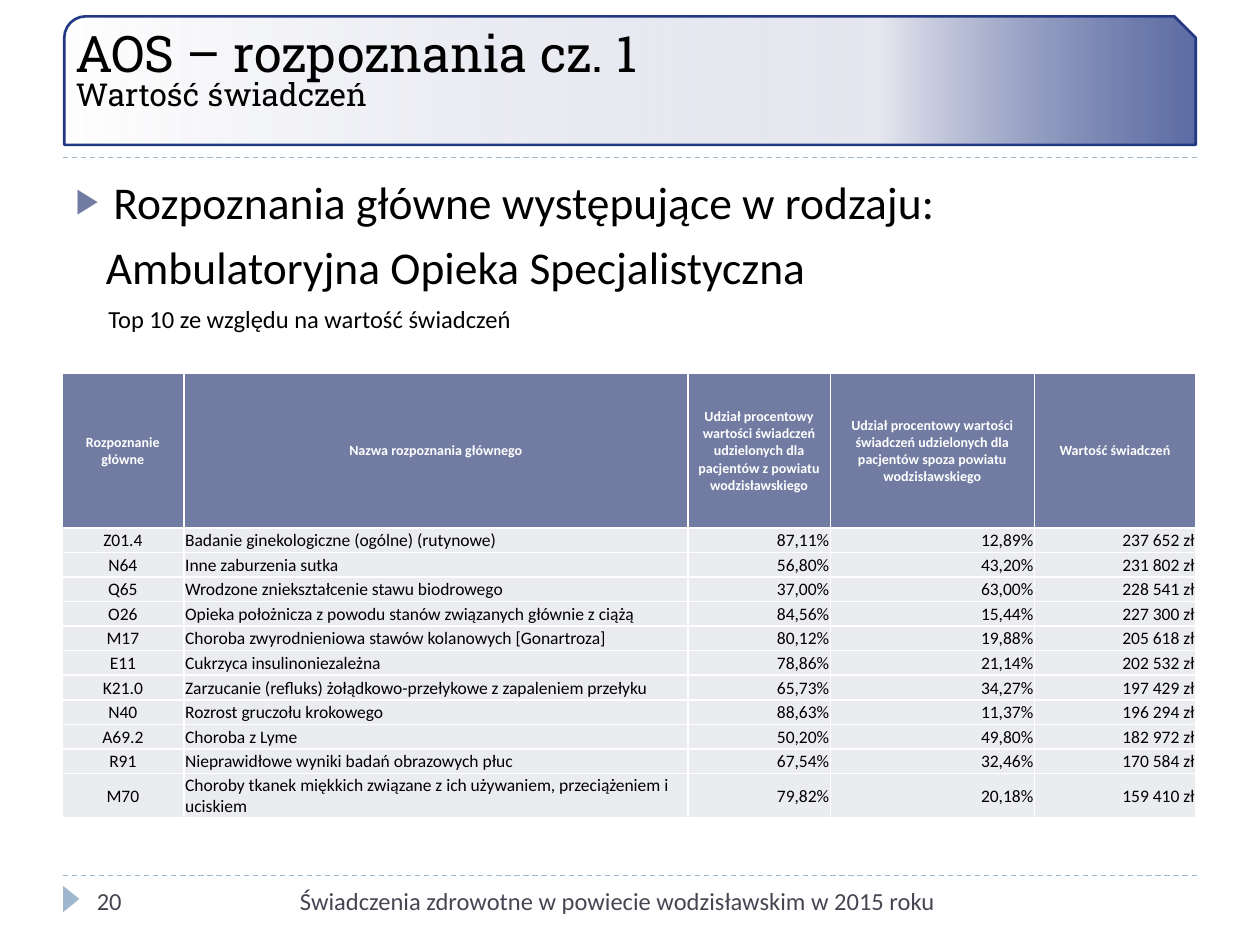
"""Builds the slide with the ten costliest outpatient diagnoses."""
from dataclasses import dataclass
from typing import Optional

from pptx import Presentation
from pptx.dml.color import RGBColor
from pptx.enum.dml import MSO_LINE
from pptx.enum.shapes import MSO_CONNECTOR, MSO_SHAPE
from pptx.enum.text import MSO_ANCHOR, MSO_AUTO_SIZE, PP_ALIGN
from pptx.oxml import parse_xml
from pptx.oxml.ns import nsdecls, qn
from pptx.util import Emu, Inches, Pt

WIDTH, HEIGHT = Inches(10), Inches(7.5)
COLUMN, ROW = WIDTH / 100, HEIGHT / 75

BLACK = RGBColor(0x00, 0x00, 0x00)
WHITE = RGBColor(0xFF, 0xFF, 0xFF)
SLATE = RGBColor(0x46, 0x46, 0x53)
SKY = RGBColor(0x9F, 0xB8, 0xCD)
NAVY = RGBColor(0x23, 0x38, 0x83)
MIST = RGBColor(0xE6, 0xE7, 0xEF)
HAZE = RGBColor(0xCC, 0xD0, 0xE0)
VIOLET = RGBColor(0x72, 0x7C, 0xA3)
PALE = RGBColor(0xEB, 0xEC, 0xF0)

BODY_FONT, TITLE_FONT = "Calibri", "Roboto Slab"
BANNER_STOPS = ((0, NAVY, 73), (28, MIST, 100), (100, HAZE, 0))


@dataclass(frozen=True)
class Area:
    """A rectangle in grid columns and rows."""
    left: float
    top: float
    width: float
    height: float

    def box(self) -> tuple:
        return (Emu(round(self.left * COLUMN)), Emu(round(self.top * ROW)),
                Emu(round(self.width * COLUMN)), Emu(round(self.height * ROW)))


@dataclass(frozen=True)
class Line:
    """A paragraph and its look."""
    text: str
    size: float
    color: RGBColor = BLACK
    font: str = BODY_FONT
    bold: bool = False
    align: PP_ALIGN = PP_ALIGN.LEFT
    before: float = 0
    spacing: float = 1.0
    margin: float = 0
    hanging: float = 0
    bullet: Optional[str] = None


TITLE_LINES = (
    Line("AOS – rozpoznania cz. 1", 28.8, font=TITLE_FONT, spacing=0.8),
    Line("Wartość świadczeń", 18, font=TITLE_FONT, spacing=0.8),
)
BODY_LINES = (
    Line("Rozpoznania główne występujące w rodzaju:", 26, align=PP_ALIGN.JUSTIFY,
         margin=3, hanging=3, bullet="▶"),
    Line("Ambulatoryjna Opieka Specjalistyczna", 26, align=PP_ALIGN.JUSTIFY,
         before=6, margin=2.4),
    Line("Top 10 ze względu na wartość świadczeń", 14, align=PP_ALIGN.JUSTIFY,
         before=6, margin=2.6),
)
FOOTERS = (
    (Area(6.7, 69.8, 21.7, 4), Line("20", 14, SLATE)),
    (Area(21.7, 69.8, 53.5, 4),
     Line("Świadczenia zdrowotne w powiecie wodzisławskim w 2015 roku", 14, SLATE,
          align=PP_ALIGN.RIGHT)),
)

TABLE_AREA = Area(4.9, 29.6, 90, 35.3)
TABLE_COLUMNS = (9.7, 40, 11.3, 16.2, 12.8)
TABLE_ROWS = (12.3, *[1.95] * 10, 3.5)
ALIGNS = (PP_ALIGN.CENTER, PP_ALIGN.LEFT, *[PP_ALIGN.RIGHT] * 3)
HEADERS = (
    "Rozpoznanie główne",
    "Nazwa rozpoznania głównego",
    "Udział procentowy wartości świadczeń udzielonych dla pacjentów z powiatu wodzisławskiego",
    "Udział procentowy wartości świadczeń udzielonych dla pacjentów spoza powiatu wodzisławskiego",
    "Wartość świadczeń",
)
DIAGNOSES = (
    ("Z01.4", "Badanie ginekologiczne (ogólne) (rutynowe)", "87,11%", "12,89%", "237 652 zł"),
    ("N64", "Inne zaburzenia sutka", "56,80%", "43,20%", "231 802 zł"),
    ("Q65", "Wrodzone zniekształcenie stawu biodrowego", "37,00%", "63,00%", "228 541 zł"),
    ("O26", "Opieka położnicza z powodu stanów związanych głównie z ciążą",
     "84,56%", "15,44%", "227 300 zł"),
    ("M17", "Choroba zwyrodnieniowa stawów kolanowych [Gonartroza]",
     "80,12%", "19,88%", "205 618 zł"),
    ("E11", "Cukrzyca insulinoniezależna", "78,86%", "21,14%", "202 532 zł"),
    ("K21.0", "Zarzucanie (refluks) żołądkowo-przełykowe z zapaleniem przełyku",
     "65,73%", "34,27%", "197 429 zł"),
    ("N40", "Rozrost gruczołu krokowego", "88,63%", "11,37%", "196 294 zł"),
    ("A69.2", "Choroba z Lyme", "50,20%", "49,80%", "182 972 zł"),
    ("R91", "Nieprawidłowe wyniki badań obrazowych płuc", "67,54%", "32,46%", "170 584 zł"),
    ("M70", "Choroby tkanek miękkich związane z ich używaniem, przeciążeniem i uciskiem",
     "79,82%", "20,18%", "159 410 zł"),
)


def set_all(target, values: dict) -> None:
    for name, value in values.items():
        setattr(target, name, value)


def write(frame, lines) -> None:
    for index, line in enumerate(lines):
        paragraph = frame.paragraphs[0] if index == 0 else frame.add_paragraph()
        properties = paragraph._p.get_or_add_pPr()
        properties.set("marL", str(round(line.margin * COLUMN)))
        properties.set("indent", str(round(-line.hanging * COLUMN)))
        marks = (f'<a:buClr {nsdecls("a")}><a:srgbClr val="{VIOLET}"/></a:buClr>',
                 f'<a:buSzPct {nsdecls("a")} val="76000"/>',
                 f'<a:buFont {nsdecls("a")} typeface="{BODY_FONT}"/>',
                 f'<a:buChar {nsdecls("a")} char="{line.bullet}"/>')
        for mark in marks if line.bullet else (f'<a:buNone {nsdecls("a")}/>',):
            properties.append(parse_xml(mark))
        set_all(paragraph, {"alignment": line.align, "space_before": Pt(line.before),
                            "space_after": Pt(0), "line_spacing": line.spacing})
        run = paragraph.add_run()
        run.text = line.text
        set_all(run.font, {"name": line.font, "size": Pt(line.size), "bold": line.bold})
        run.font.color.rgb = line.color


def place(shape, area: Area) -> None:
    set_all(shape, dict(zip(("left", "top", "width", "height"), area.box())))


def add_rule(slide, row: float) -> None:
    left, top, width, _ = Area(5, row, 90, 0).box()
    rule = slide.shapes.add_connector(MSO_CONNECTOR.STRAIGHT, left, top, left + width, top)
    set_all(rule.line, {"width": Pt(0.75), "dash_style": MSO_LINE.DASH})
    rule.line.color.rgb = SKY
    rule.element.spPr.append(parse_xml(f'<a:effectLst {nsdecls("a")}/>'))


def add_banner(slide):
    banner = slide.shapes.add_shape(MSO_SHAPE.SNIP_ROUND_RECTANGLE, *Area(5.1, 1.3, 89.8, 10.2).box())
    banner.shadow.inherit = False
    banner.fill.gradient()
    stops = "".join(
        f'<a:gs pos="{position * 1000}"><a:srgbClr val="{color}">'
        f'<a:alpha val="{opacity * 1000}"/></a:srgbClr></a:gs>'
        for position, color, opacity in BANNER_STOPS)
    properties = banner.element.spPr
    properties.replace(properties.find(qn("a:gradFill")), parse_xml(
        f'<a:gradFill {nsdecls("a")} rotWithShape="1"><a:gsLst>{stops}</a:gsLst>'
        '<a:lin ang="10800000" scaled="0"/></a:gradFill>'))
    banner.line.color.rgb = NAVY
    banner.line.width = Pt(1.5)
    return banner


def add_marker(slide) -> None:
    marker = slide.shapes.add_shape(MSO_SHAPE.ISOSCELES_TRIANGLE, *Area(4.6, 70.7, 2.1, 1.3).box())
    marker.rotation = 90
    marker.shadow.inherit = False
    marker.fill.solid()
    marker.fill.fore_color.rgb = SKY
    marker.line.fill.background()


def fill_cell(cell, line: Line, fill: RGBColor) -> None:
    edge = Inches(0.01)
    set_all(cell, {"margin_left": edge, "margin_right": edge, "margin_top": edge,
                   "margin_bottom": 0, "vertical_anchor": MSO_ANCHOR.MIDDLE})
    write(cell.text_frame, (line,))
    properties = cell._tc.get_or_add_tcPr()
    for side in ("lnL", "lnR", "lnT", "lnB"):
        properties.append(parse_xml(
            f'<a:{side} {nsdecls("a")} w="{Pt(1)}"><a:solidFill>'
            f'<a:srgbClr val="{WHITE}"/></a:solidFill></a:{side}>'))
    cell.fill.solid()
    cell.fill.fore_color.rgb = fill


def add_diagnoses(slide) -> None:
    table = slide.shapes.add_table(len(TABLE_ROWS), len(TABLE_COLUMNS), *TABLE_AREA.box()).table
    for column, width in zip(table.columns, TABLE_COLUMNS):
        column.width = Emu(round(width * COLUMN))
    for row, height in zip(table.rows, TABLE_ROWS):
        row.height = Emu(round(height * ROW))
    for index, header in enumerate(HEADERS):
        fill_cell(table.cell(0, index),
                  Line(header, 8, WHITE, bold=True, align=PP_ALIGN.CENTER), VIOLET)
    for row, diagnosis in enumerate(DIAGNOSES, 1):
        for index, (text, align) in enumerate(zip(diagnosis, ALIGNS)):
            fill_cell(table.cell(row, index), Line(text, 10, align=align), PALE)


def main() -> None:
    presentation = Presentation()
    set_all(presentation, {"slide_width": WIDTH, "slide_height": HEIGHT})
    slide = presentation.slides.add_slide(presentation.slide_layouts[1])
    title, body = slide.shapes.title, slide.placeholders[1]
    place(title, Area(5, 5.2, 90, 7.1))
    place(body, Area(5, 13.3, 90, 54))
    set_all(title.text_frame, {"vertical_anchor": MSO_ANCHOR.BOTTOM, "margin_bottom": Inches(0.34),
                               "auto_size": MSO_AUTO_SIZE.NONE})
    set_all(body.text_frame, {"vertical_anchor": MSO_ANCHOR.TOP, "auto_size": MSO_AUTO_SIZE.NONE})
    write(title.text_frame, TITLE_LINES)
    write(body.text_frame, BODY_LINES)
    title.element.addprevious(add_banner(slide).element)
    for row in (12.5, 69.5):
        add_rule(slide, row)
    add_marker(slide)
    for area, line in FOOTERS:
        footer = slide.shapes.add_textbox(*area.box())
        footer.text_frame.word_wrap = True
        write(footer.text_frame, (line,))
    add_diagnoses(slide)
    presentation.save("out.pptx")


if __name__ == "__main__":
    main()
